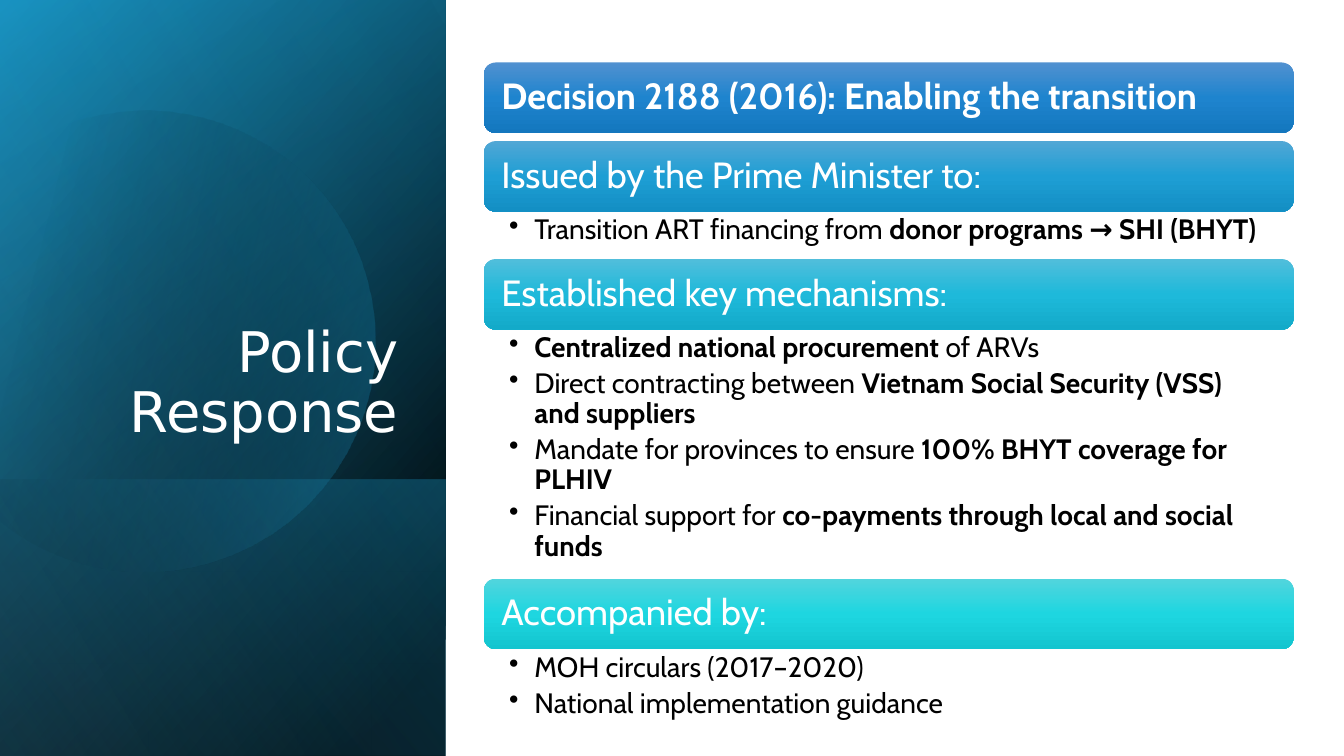
import math
import pptx
import pptx.util
import pptx.dml.color
import pptx.enum.shapes
import pptx.enum.text
import pptx.oxml
import pptx.oxml.ns
from lxml import etree

Inches, Pt = pptx.util.Inches, pptx.util.Pt
SHAPES = pptx.enum.shapes.MSO_SHAPE
ALIGN = pptx.enum.text.PP_ALIGN
ANCHOR = pptx.enum.text.MSO_ANCHOR

COLOURS = {"black": "000000", "white": "FFFFFF", "deep": "1482AC",
           "sky": "1CADE4", "pale": "77CEEF"}
BODY_FONT, TITLE_FONT = "Cabin", "DejaVu Sans"

# Each section: bar gradient, heading, heading bold, height below the bar, bullets of (text, bold) spans
SECTIONS = [
    (("5191D0", "1E84CE", "1477BE"),
     "Decision 2188 (2016): Enabling the transition", True, 0.08, []),
    (("51A7D5", "1E9ED4", "138FC4"),
     "Issued by the Prime Minister to:", False, 0.47,
     [[("Transition ART financing from ", False), ("donor programs → SHI (BHYT)", True)]]),
    (("51BEDB", "1EB9DA", "13AAC9"),
     "Established key mechanisms:", False, 2.47,
     [[("Centralized national procurement", True), (" of ARVs", False)],
      [("Direct contracting between ", False),
       ("Vietnam Social Security (VSS) and suppliers", True)],
      [("Mandate for provinces to ensure ", False),
       ("100% BHYT coverage for PLHIV", True)],
      [("Financial support for ", False),
       ("co-payments through local and social funds", True)]]),
    (("52D5DD", "1ED6E0", "13C5CF"),
     "Accompanied by:", False, 0.77,
     [[("MOH circulars (2017–2020)", False)],
      [("National implementation guidance", False)]]),
]

# Outline of the large disc, cut off at the left edge
DISC_START = (1.49, 1.1)
DISC_CURVES = [
    ((2.46, 1.12), (3.35, 1.77), (3.63, 2.75)),
    ((3.98, 3.97), (3.28, 5.23), (2.07, 5.58)),
    ((1.31, 5.8), (0.53, 5.61), (-0.03, 5.14)),
    ((-0.15, 5.03),),
    ((-0.15, 1.75),),
    ((0, 1.61),),
    ((0.23, 1.42), (0.5, 1.28), (0.8, 1.19)),
    ((1.03, 1.13), (1.26, 1.1), (1.49, 1.1)),
]
DISC_CENTRE, DISC_TURN = (1.58, 3.34), -16.1


def paint(shape, stops, angle):
    """Fill with a linear gradient of (percent, hex, opacity percent) stops."""
    shape.shadow.inherit = False
    shape.line.fill.background()
    shape.fill.background()
    marks = "".join(
        f'<a:gs pos="{place * 1000}"><a:srgbClr val="{colour}">'
        f'<a:alpha val="{opacity * 1000}"/></a:srgbClr></a:gs>'
        for place, colour, opacity in stops)
    gradient = pptx.oxml.parse_xml(
        f'<a:gradFill {pptx.oxml.ns.nsdecls("a")} rotWithShape="1"><a:gsLst>{marks}</a:gsLst>'
        f'<a:lin ang="{angle * 60000}" scaled="0"/></a:gradFill>')
    properties = shape._element.spPr
    properties.replace(properties.find(pptx.oxml.ns.qn("a:noFill")), gradient)


def style(font, size, colour, name=BODY_FONT, bold=False):
    font.name, font.size, font.bold = name, Pt(size), bold
    font.color.rgb = pptx.dml.color.RGBColor.from_string(colour)


def set_frame(frame, anchor, insets):
    frame.word_wrap = True
    frame.vertical_anchor = anchor
    (frame.margin_left, frame.margin_top,
     frame.margin_right, frame.margin_bottom) = map(Inches, insets)


def add_veil(page, left, top, width, height, stops, angle):
    """Add a mirrored rectangle on its side that covers the given upright box."""
    veil = page.shapes.add_shape(
        SHAPES.RECTANGLE, Inches(left + (width - height) / 2),
        Inches(top + (height - width) / 2), Inches(height), Inches(width))
    veil.rotation = 90
    veil._element.spPr.xfrm.set("flipH", "1")
    paint(veil, stops, angle)


def disc_points(steps=16):
    """Follow the outline, turned back so that the shape's rotation restores it."""
    outline = [DISC_START]
    for curve in DISC_CURVES:
        if len(curve) == 1:
            outline.append(curve[0])
            continue
        nodes = (outline[-1],) + curve
        for step in range(1, steps + 1):
            t = step / steps
            weights = ((1 - t) ** 3, 3 * t * (1 - t) ** 2, 3 * t * t * (1 - t), t ** 3)
            outline.append(tuple(sum(weight * node[axis] for weight, node in zip(weights, nodes))
                                 for axis in (0, 1)))
    turn = math.radians(-DISC_TURN)
    cx, cy = DISC_CENTRE
    return [(cx + (x - cx) * math.cos(turn) - (y - cy) * math.sin(turn),
             cy + (x - cx) * math.sin(turn) + (y - cy) * math.cos(turn))
            for x, y in outline]


def add_disc(page, left, top):
    points = [(Inches(left + x), Inches(top + y)) for x, y in disc_points()]
    builder = page.shapes.build_freeform(*points[0])
    builder.add_line_segments(points[1:], close=True)
    disc = builder.convert_to_shape()
    disc.rotation = DISC_TURN
    paint(disc, [(29, COLOURS["black"], 0), (100, COLOURS["sky"], 43)], 30)


def add_title_panel(page, left, top, width, height):
    black, sky = COLOURS["black"], COLOURS["sky"]
    # Layered background
    add_veil(page, left, top, width, height,
             [(8, black, 100), (100, COLOURS["deep"], 100)], 50)
    add_veil(page, left, top, width, height, [(0, black, 0), (99, sky, 46)], 30)
    band = 2.74
    add_veil(page, left, top + height - band, width, band,
             [(2, sky, 29), (100, black, 30)], 130)
    add_disc(page, left, top)
    add_veil(page, left, top, width, height,
             [(0, black, 0), (99, COLOURS["pale"], 11)], 120)
    # Title
    box = page.shapes.add_textbox(Inches(left + 0.64), Inches(top + 1.84),
                                  Inches(3.41), Inches(2.62))
    set_frame(box.text_frame, ANCHOR.BOTTOM, (0.1, 0.05, 0.1, 0.05))
    para = box.text_frame.paragraphs[0]
    para.text = "Policy Response"
    para.alignment, para.line_spacing = ALIGN.RIGHT, 0.9
    style(para.runs[0].font, 40, COLOURS["white"], TITLE_FONT)


def add_bar(page, left, top, width, height, colours, heading, bold):
    bar = page.shapes.add_shape(SHAPES.ROUNDED_RECTANGLE, Inches(left), Inches(top),
                                Inches(width), Inches(height))
    paint(bar, [(place, colour, 100) for place, colour in zip((0, 50, 100), colours)], 90)
    set_frame(bar.text_frame, ANCHOR.MIDDLE, (0.14, 0.11, 0.14, 0.11))
    para = bar.text_frame.paragraphs[0]
    para.text = heading
    para.alignment, para.line_spacing = ALIGN.LEFT, 0.9
    style(para.runs[0].font, 26, COLOURS["white"], bold=bold)


def add_bullets(page, left, top, width, height, bullets):
    box = page.shapes.add_textbox(Inches(left), Inches(top), Inches(width), Inches(height))
    frame = box.text_frame
    set_frame(frame, ANCHOR.TOP, (0.25, 0.04, 0.2, 0.04))
    for index, spans in enumerate(bullets):
        para = frame.add_paragraph() if index else frame.paragraphs[0]
        para.level, para.line_spacing, para.space_after = 1, 0.9, Pt(4)
        properties = para._p.get_or_add_pPr()
        properties.set("marL", str(Inches(0.25)))
        properties.set("indent", str(Inches(-0.25)))
        etree.SubElement(properties, pptx.oxml.ns.qn("a:buChar")).set("char", "•")
        for text, bold in spans:
            span = para.add_run()
            span.text = text
            style(span.font, 20, COLOURS["black"], bold=bold)


def add_policy_list(page, left, top, width):
    bar_height = 0.7
    for colours, heading, bold, below, bullets in SECTIONS:
        add_bar(page, left, top, width, bar_height, colours, heading, bold)
        top += bar_height
        if bullets:
            add_bullets(page, left, top, width, below, bullets)
        top += below


def main():
    deck = pptx.Presentation()
    deck.slide_width, deck.slide_height = Inches(13.33), Inches(7.5)
    page = deck.slides.add_slide(deck.slide_layouts[6])
    add_title_panel(page, 0, 0, 4.42, 7.5)
    add_policy_list(page, 4.8, 0.62, 8.03)
    deck.save("out.pptx")


if __name__ == "__main__":
    main()
